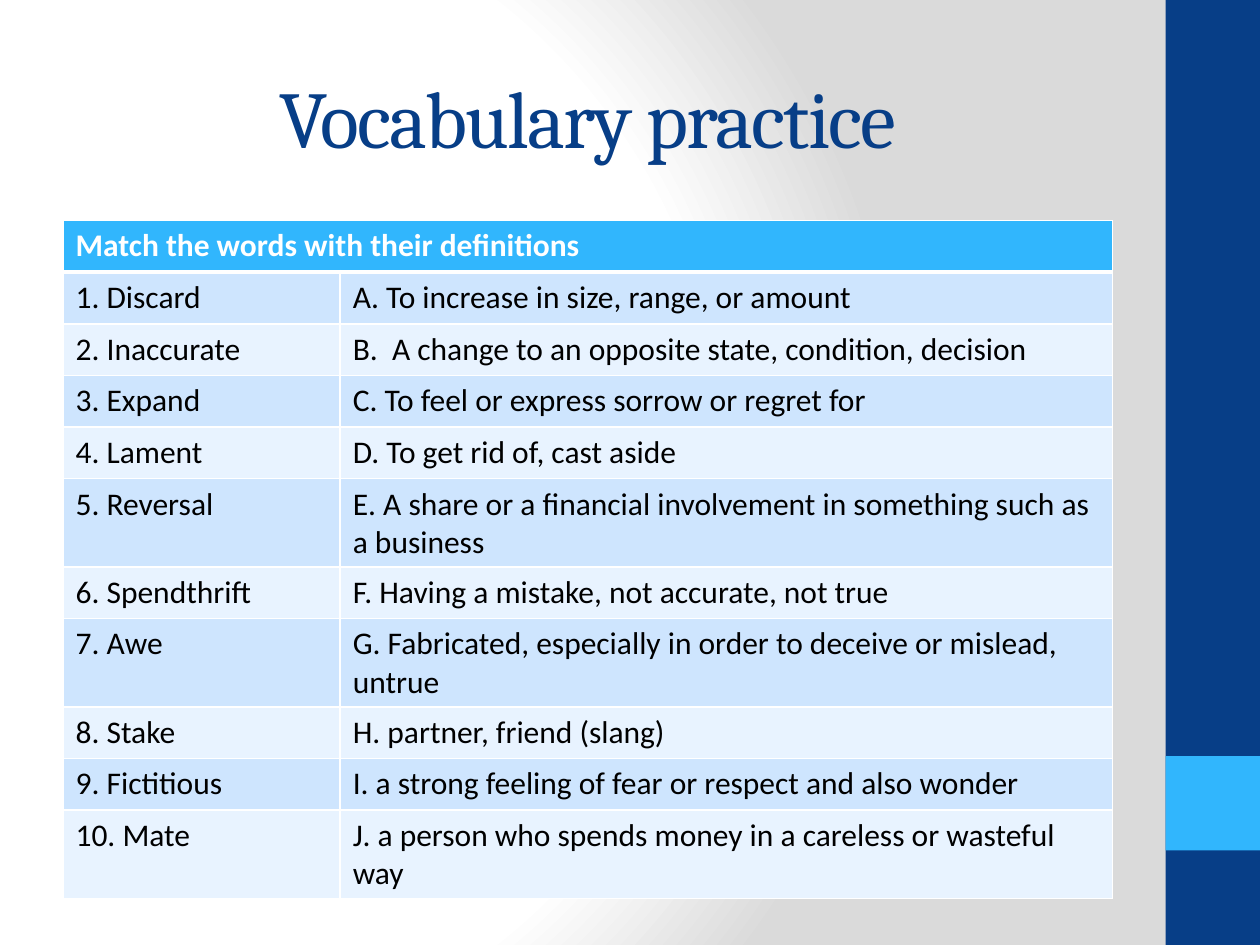
from lxml import etree
from pptx import Presentation
from pptx import util as u
from pptx.dml.color import RGBColor
from pptx.enum import shapes, text
from pptx.oxml import ns, parse_xml

COLORS = {
    "navy": "073E87",
    "sky": "31B6FD",
    "band_dark": "CEE5FE",
    "band_light": "E8F3FF",
    "white": "FFFFFF",
    "grey": "DADADA",
    "black": "000000",
}

HEADING = "Match the words with their definitions"
ROWS = [
    ("1. Discard", "A. To increase in size, range, or amount\u00a0"),
    ("2. Inaccurate", "B. \u00a0A change to an opposite state, condition, decision"),
    ("3. Expand", "C. To feel or express sorrow or regret for"),
    ("4. Lament", "D. To get rid of, cast aside"),
    ("5. Reversal", "E. A share or a financial involvement in something such as a business"),
    ("6. Spendthrift", "F. Having a mistake, not accurate, not true"),
    ("7. Awe", "G. Fabricated, especially in order to deceive or mislead, untrue"),
    ("8. Stake", "H. partner, friend (slang)"),
    ("9. Fictitious", "I. a strong feeling of fear or respect and also wonder"),
    ("10. Mate", "J. a person who spends money in a careless or wasteful way"),
]


def rgb(name):
    return RGBColor.from_string(COLORS[name])


def style_span(span, font, size, color, bold=False):
    span.font.name = font
    span.font.size = u.Pt(size)
    span.font.bold = bold
    span.font.color.rgb = rgb(color)


def paint_background(page):
    page.background.fill.gradient()
    old = next(page.element.iter(ns.qn("a:gradFill")))
    stops = "".join(
        f'<a:gs pos="{percent * 1000}"><a:srgbClr val="{COLORS[name]}"/></a:gs>'
        for percent, name in [(0, "white"), (75, "white"), (100, "grey")]
    )
    gradient = parse_xml(
        f'<a:gradFill {ns.nsdecls("a")} rotWithShape="1"><a:gsLst>{stops}</a:gsLst>'
        '<a:path path="circle">'
        '<a:fillToRect l="20000" t="50000" r="100000" b="50000"/>'
        "</a:path></a:gradFill>"
    )
    old.getparent().replace(old, gradient)


def add_block(page, left, top, width, height, color):
    block = page.shapes.add_shape(
        shapes.MSO_SHAPE.RECTANGLE, left, top, width, height)
    block.shadow.inherit = False
    block.fill.solid()
    block.fill.fore_color.rgb = rgb(color)
    block.line.fill.background()


def add_side_band(page, left, top, width, height):
    add_block(page, left, top, width, height, "navy")
    add_block(page, left, top + int(height * 0.8), width, width, "sky")


def add_title(page, left, top, width, height):
    box = page.shapes.add_textbox(left, top, width, height)
    frame = box.text_frame
    frame.word_wrap = True
    frame.vertical_anchor = text.MSO_ANCHOR.MIDDLE
    frame.text = "Vocabulary practice"
    para = frame.paragraphs[0]
    para.alignment = text.PP_ALIGN.CENTER
    span = para.runs[0]
    style_span(span, "Cambria", 46, "navy")
    span.font._element.set("spc", "-100")


def set_borders(cell, bottom):
    properties = cell._tc.get_or_add_tcPr()
    widths = {"lnL": 1, "lnR": 1, "lnT": 1, "lnB": bottom}
    for index, (side, width) in enumerate(widths.items()):
        line = etree.Element(ns.qn(f"a:{side}"), w=str(u.Pt(width)))
        fill = etree.SubElement(line, ns.qn("a:solidFill"))
        etree.SubElement(fill, ns.qn("a:srgbClr"), val=COLORS["white"])
        properties.insert(index, line)


def fill_cell(cell, words, fill, color, bold=False, bottom=1):
    cell.fill.solid()
    cell.fill.fore_color.rgb = rgb(fill)
    set_borders(cell, bottom)
    if words:
        cell.text_frame.text = words
        style_span(cell.text_frame.paragraphs[0].runs[0],
                   "Calibri", 18, color, bold)


def add_matching_table(page, left, top, width, row_height):
    count = len(ROWS) + 1
    table = page.shapes.add_table(
        count, 2, left, top, width, row_height * count).table
    table.columns[0].width = u.Inches(2.2)
    table.columns[1].width = width - u.Inches(2.2)
    for cell, words in zip(table.rows[0].cells, (HEADING, "")):
        fill_cell(cell, words, "sky", "white", bold=True, bottom=3)
    table.cell(0, 0).merge(table.cell(0, 1))
    for number, entry in enumerate(ROWS, start=1):
        band = "band_dark" if number % 2 else "band_light"
        for cell, words in zip(table.rows[number].cells, entry):
            fill_cell(cell, words, band, "black", bottom=1)


def main():
    deck = Presentation()
    deck.slide_width = u.Inches(10)
    deck.slide_height = u.Inches(7.5)
    page = deck.slides.add_slide(deck.slide_layouts[6])
    paint_background(page)
    add_side_band(page, u.Inches(9.25), 0, u.Inches(0.75), deck.slide_height)
    add_title(page, u.Inches(0.5), u.Inches(0.3), u.Inches(8.33), u.Inches(1.25))
    add_matching_table(
        page, u.Inches(0.5), u.Inches(1.75), u.Inches(8.33), u.Inches(0.41))
    deck.save("out.pptx")


if __name__ == "__main__":
    main()
